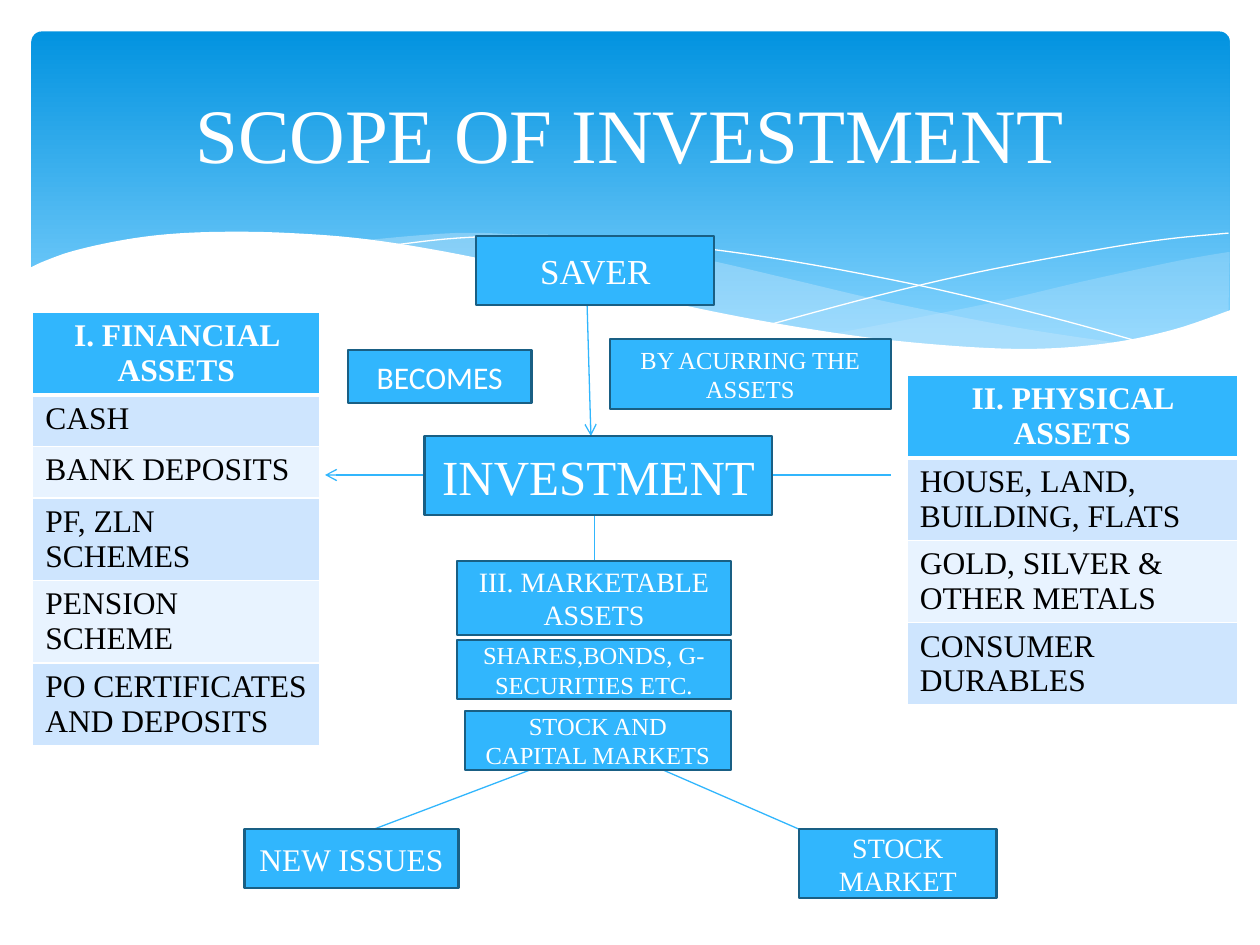
from lxml.etree import SubElement
from pptx import Presentation
from pptx.dml.color import RGBColor
from pptx.enum.shapes import MSO_CONNECTOR as CONN, MSO_SHAPE as SHAPE
from pptx.enum.text import MSO_ANCHOR as ANCHOR, PP_ALIGN as ALIGN
from pptx.oxml.ns import qn
from pptx.util import Inches, Pt

COLS, ROWS = 100, 75
W, H = Inches(10), Inches(7.5)
SERIF = "Times New Roman"
C = {
    "white": "FFFFFF", "black": "000000", "blue": "31B6FD", "edge": "195F84",
    "sky_top": "0293E0", "sky_end": "83D3FE", "mist": "C6E7FC",
    "band_dark": "CEE5FE", "band_light": "E8F3FF",
}

RIGHT_TOP = [(97.5, 20), (93.5, 20.7), (86.1, 22.3), (77.9, 24.2), (66.1, 26.5)]
RIGHT_BASE = [(66.1, 26.5), (73.2, 27.4), (80.3, 27.8), (87.2, 27.4),
              (93.5, 26.2), (97.5, 24.7), (97.6, 20)]
MID_TOP = [(89.3, 27.3), (80.7, 26), (70.6, 24), (62.9, 22.2), (55.5, 20.5),
           (48.9, 19.4), (42, 18.7), (36.1, 18.5), (28.6, 19.1)]
MID_BASE = [(28.6, 19.1), (36.2, 20.3), (44.9, 22.2), (56.6, 24.8), (65, 26.4),
            (73.6, 27.5), (81.8, 27.8), (89.3, 27.3)]
FALLING_LINE = [(30.9, 19.5), (36.3, 18.9), (43.3, 18.7), (51, 19.2),
                (60.8, 20.4), (72.7, 22.6), (83.1, 25.1), (90.7, 27.2)]
RISING_LINE = [(61.3, 25.7), (69.5, 23.5), (77.6, 21.6), (86.6, 19.9),
               (92.4, 19), (97.5, 18.5)]
WHITE_TOP = [(97.7, 24.6), (93, 26.2), (87.5, 27.3), (80.9, 27.7), (72.6, 27.2),
             (64.8, 26.2), (55.5, 24.5), (44.7, 22), (36.5, 20.2), (29.2, 19),
             (23, 18.5), (17.7, 18.4), (13.2, 18.6), (9.5, 19.1), (5.9, 19.9),
             (3.6, 20.7), (2.3, 21.3)]
WHITE_BASE = [(2.3, 32.9), (97.7, 32.9)]

TABLES = [
    (2.6, 24.8, 22.8, 33.2,
     ["I. FINANCIAL ASSETS", "CASH", "BANK DEPOSITS", "PF, ZLN SCHEMES",
      "PENSION SCHEME", "PO CERTIFICATES AND DEPOSITS"]),
    (72, 29.8, 26.2, 28,
     ["II. PHYSICAL ASSETS", "HOUSE, LAND, BUILDING, FLATS",
      "GOLD, SILVER & OTHER METALS", "CONSUMER DURABLES"]),
]
LINKS = [
    (46.6, 24.3, 46.9, 34.6, True),
    (33.7, 37.7, 25.8, 37.7, True),
    (61.2, 37.7, 70.7, 37.7, False),
    (47.2, 40.1, 47.2, 48.8, False),
    (42.1, 61.1, 29.7, 65.8, False),
    (52.6, 61.1, 63.4, 65.8, False),
]
BOXES = [
    (33.7, 34.6, 27.6, 6.3, "INVESTMENT", 28, SERIF),
    (37.8, 18.7, 18.9, 5.5, "SAVER", 20, SERIF),
    (27.6, 27.8, 14.6, 4.2, "BECOMES", 18, "Calibri"),
    (48.4, 26.9, 22.3, 5.6, "BY ACURRING THE ASSETS", 14, SERIF),
    (36.3, 44.5, 21.7, 5.9, "III. MARKETABLE ASSETS", 16, SERIF),
    (36.3, 50.8, 21.7, 4.7, "SHARES,BONDS, G-SECURITIES ETC.", 14, SERIF),
    (36.9, 56.4, 21.1, 4.7, "STOCK AND CAPITAL MARKETS", 14, SERIF),
    (19.4, 65.8, 17, 4.7, "NEW ISSUES", 18, SERIF),
    (63.4, 65.8, 15.7, 5.5, "STOCK MARKET", 16, SERIF),
]


def rgb(name):
    return RGBColor.from_string(C[name])


def grid(*values):
    return [round(v * (H / ROWS if i % 2 else W / COLS)) for i, v in enumerate(values)]


def paint(fill, color):
    fill.solid()
    fill.fore_color.rgb = rgb(color)


def write(tf, text, size, font, color="white", bold=False, align=ALIGN.CENTER):
    p = tf.paragraphs[0]
    p.alignment = align
    r = p.add_run()
    r.text = text
    r.font.size, r.font.name, r.font.bold = Pt(size), font, bold
    r.font.color.rgb = rgb(color)


def smooth(knots, steps=6):
    padded = [knots[0], *knots, knots[-1]]
    curve = []
    for a, b, c, d in zip(padded, padded[1:], padded[2:], padded[3:]):
        for t in (i / steps for i in range(steps)):
            curve.append(tuple(
                (2 * q + (r - p) * t + (2 * p - 5 * q + 4 * r - s) * t ** 2
                 + (3 * q - p - 3 * r + s) * t ** 3) / 2
                for p, q, r, s in zip(a, b, c, d)))
    return curve + [knots[-1]]


def add_wave(s, points, fill=None, alpha=100):
    points = [grid(*pt) for pt in points]
    builder = s.shapes.build_freeform(*points[0])
    builder.add_line_segments(points[1:], close=fill is not None)
    sp = builder.convert_to_shape()
    sp.shadow.inherit = False
    if fill is None:
        sp.fill.background()
        paint(sp.line.fill, "white")
        sp.line.width = Pt(0)
        return
    paint(sp.fill, fill)
    sp.line.fill.background()
    if alpha < 100:
        color = sp.fill._xPr.find(qn("a:solidFill"))[0]
        SubElement(color, qn("a:alpha"), val=str(alpha * 1000))


def add_backdrop(s):
    sky = s.shapes.add_shape(SHAPE.ROUNDED_RECTANGLE, *grid(2.5, 2.5, 95.1, 27))
    sky.adjustments[0] = 0.03
    sky.shadow.inherit = False
    sky.line.fill.background()
    sky.fill.gradient()
    sky.fill.gradient_angle = 270
    stops = zip(sky.fill.gradient_stops, ("sky_top", "sky_end"), (0, 0.9))
    for stop, color, position in stops:
        stop.color.rgb = rgb(color)
        stop.position = position
    add_wave(s, smooth(RIGHT_TOP) + smooth(RIGHT_BASE[:-1]) + RIGHT_BASE[-1:], "mist", 29)
    add_wave(s, smooth(MID_TOP) + smooth(MID_BASE), "mist", 40)
    add_wave(s, smooth(FALLING_LINE))
    add_wave(s, smooth(RISING_LINE))
    add_wave(s, smooth(WHITE_TOP) + WHITE_BASE, "white")


def add_borders(cell, top, bottom):
    tcPr = cell._tc.get_or_add_tcPr()
    for side, width in (("L", 1), ("R", 1), ("T", top), ("B", bottom)):
        ln = SubElement(tcPr, qn("a:ln" + side), w=str(Pt(width)))
        SubElement(SubElement(ln, qn("a:solidFill")), qn("a:srgbClr"), val=C["white"])


def add_list_table(s, x, y, w, h, items):
    frame = s.shapes.add_table(len(items), 1, *grid(x, y, w, h))
    for i, text in enumerate(items):
        frame.table.rows[i].height = grid(0, 4.1)[1]
        cell = frame.table.cell(i, 0)
        add_borders(cell, 3 if i == 1 else 1, 3 if i == 0 else 1)
        if i == 0:
            paint(cell.fill, "blue")
            write(cell.text_frame, text, 18, SERIF, bold=True)
        else:
            paint(cell.fill, "band_dark" if i % 2 else "band_light")
            write(cell.text_frame, text, 18, SERIF, "black", align=ALIGN.LEFT)
    frame.height = grid(0, h)[1]


def add_link(s, x1, y1, x2, y2, arrow):
    link = s.shapes.add_connector(CONN.STRAIGHT, *grid(x1, y1, x2, y2))
    paint(link.line.fill, "blue")
    link.line.width = Pt(0.75)
    if arrow:
        SubElement(link.line._get_or_add_ln(), qn("a:tailEnd"), type="arrow")
    SubElement(link._element.spPr, qn("a:effectLst"))


def add_box(s, x, y, w, h, text, size, font):
    sp = s.shapes.add_shape(SHAPE.RECTANGLE, *grid(x, y, w, h))
    sp.shadow.inherit = False
    paint(sp.fill, "blue")
    paint(sp.line.fill, "edge")
    sp.line.width = Pt(1.25)
    tf = sp.text_frame
    tf.word_wrap = True
    tf.vertical_anchor = ANCHOR.MIDDLE
    write(tf, text, size, font)


def place_title(s, text):
    title = s.shapes.title
    title.left, title.top, title.width, title.height = grid(5, 3.7, 90, 13.7)
    title.text_frame.vertical_anchor = ANCHOR.MIDDLE
    write(title.text_frame, text, 44, SERIF)
    s.shapes._spTree.append(title._element)


def main():
    prs = Presentation()
    prs.slide_width, prs.slide_height = W, H
    s = prs.slides.add_slide(prs.slide_layouts[5])
    add_backdrop(s)
    place_title(s, "SCOPE OF INVESTMENT")
    for add, rows in ((add_list_table, TABLES), (add_link, LINKS), (add_box, BOXES)):
        for row in rows:
            add(s, *row)
    prs.save("out.pptx")


if __name__ == "__main__":
    main()
